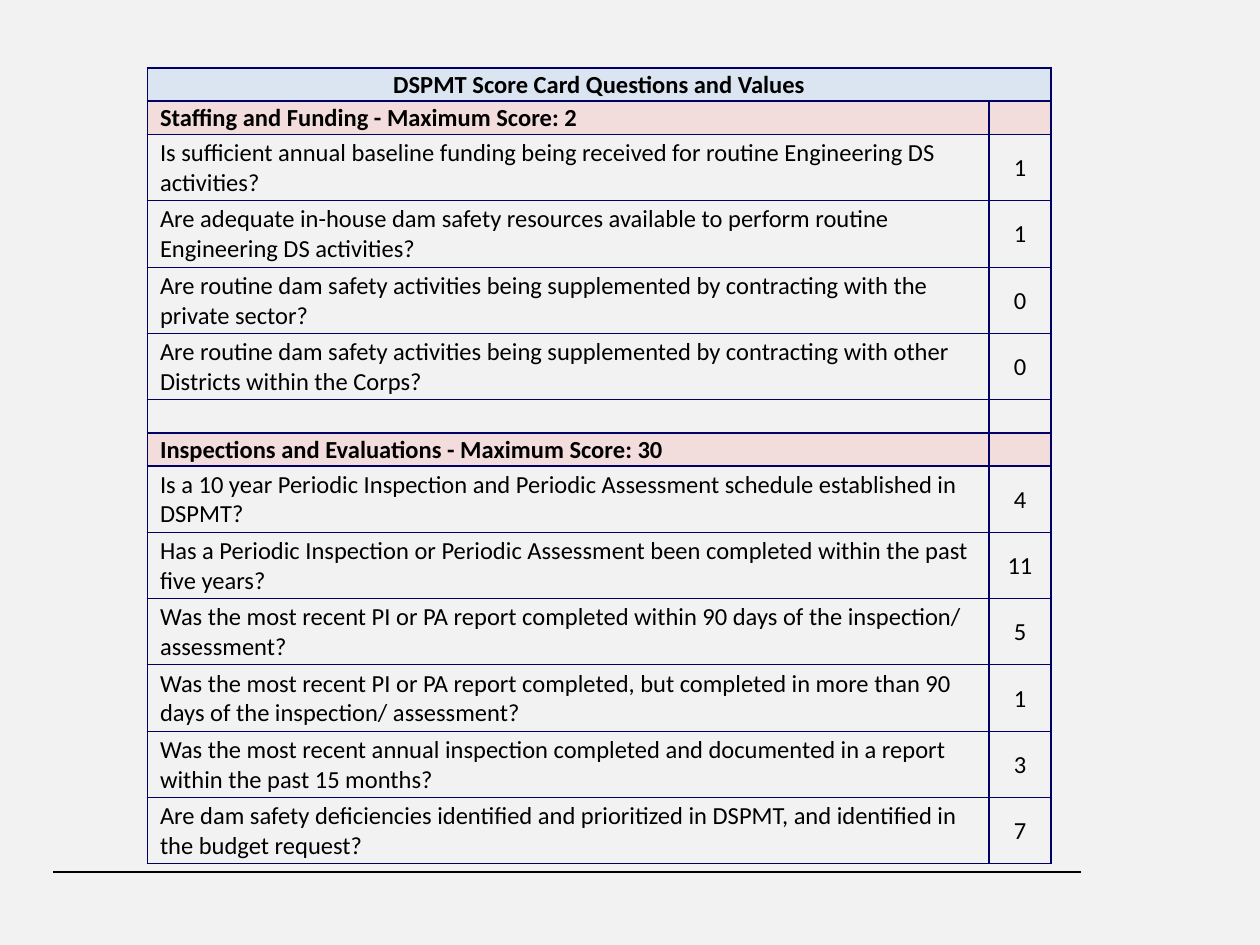
from lxml import etree
from pptx import Presentation
from pptx import util as u
from pptx.dml.color import RGBColor
from pptx.enum import shapes, text
from pptx.oxml.ns import qn

COLORS = {
    "background": "F2F2F2",
    "title": "DBE5F1",
    "section": "F2DDDC",
    "border": "000066",
    "ink": "000000",
}
THIN, THICK = 0.5, 1

# Each row: kind, text, value
ROWS = [
    ("title", "DSPMT Score Card Questions and Values", ""),
    ("section", "Staffing and Funding - Maximum Score: 2", ""),
    ("question", "Is sufficient annual baseline funding being received for routine Engineering DS activities?", "1"),
    ("question", "Are adequate in-house dam safety resources available to perform routine Engineering DS activities?", "1"),
    ("question", "Are routine dam safety activities being supplemented by contracting with the private sector?", "0"),
    ("question", "Are routine dam safety activities being supplemented by contracting with other Districts within the Corps?", "0"),
    ("gap", "", ""),
    ("section", "Inspections and Evaluations - Maximum Score: 30", ""),
    ("question", "Is a 10 year Periodic Inspection and Periodic Assessment schedule established in DSPMT?", "4"),
    ("question", "Has a Periodic Inspection or Periodic Assessment been completed within the past five years?", "11"),
    ("question", "Was the most recent PI or PA report completed within 90 days of the inspection/ assessment?", "5"),
    ("question", "Was the most recent PI or PA report completed, but completed in more than 90 days of the inspection/ assessment?", "1"),
    ("question", "Was the most recent annual inspection completed and documented in a report within the past 15 months?", "3"),
    ("question", "Are dam safety deficiencies identified and prioritized in DSPMT, and identified in the budget request?", "7"),
]


def set_borders(cell, top, bottom):
    properties = cell._tc.get_or_add_tcPr()
    widths = {"a:lnL": THICK, "a:lnR": THICK, "a:lnT": top, "a:lnB": bottom}
    for position, (tag, width) in enumerate(widths.items()):
        line = etree.Element(qn(tag), w=str(u.Pt(width)))
        fill = etree.SubElement(line, qn("a:solidFill"))
        etree.SubElement(fill, qn("a:srgbClr"), val=COLORS["border"])
        properties.insert(position, line)


def fill_cell(cell, content, kind, centred):
    cell.vertical_anchor = text.MSO_ANCHOR.MIDDLE
    cell.margin_left = u.Inches(0.01 if centred else 0.1)
    cell.margin_top = cell.margin_right = u.Inches(0.01)
    cell.margin_bottom = 0
    if kind in COLORS:
        cell.fill.solid()
        cell.fill.fore_color.rgb = RGBColor.from_string(COLORS[kind])
    else:
        cell.fill.background()
    paragraph = cell.text_frame.paragraphs[0]
    paragraph.alignment = text.PP_ALIGN.CENTER if centred else text.PP_ALIGN.LEFT
    paragraph.font.size = u.Pt(14)
    if not content:
        # Keeps an empty cell as low as its row
        etree.SubElement(paragraph._p, qn("a:endParaRPr"), sz="1400")
        return
    run = paragraph.add_run()
    run.text = content
    run.font.name = "Calibri"
    run.font.size = u.Pt(14)
    run.font.bold = kind in ("title", "section")
    run.font.color.rgb = RGBColor.from_string(COLORS["ink"])


presentation = Presentation()
presentation.slide_width = u.Inches(10)
presentation.slide_height = u.Inches(7.5)
slide = presentation.slides.add_slide(presentation.slide_layouts[6])
slide.background.fill.solid()
slide.background.fill.fore_color.rgb = RGBColor.from_string(COLORS["background"])

# Footer rule
rule = slide.shapes.add_connector(
    shapes.MSO_CONNECTOR.STRAIGHT,
    u.Inches(8.58), u.Inches(6.92), u.Inches(0.42), u.Inches(6.92))
rule.line.color.rgb = RGBColor.from_string(COLORS["ink"])
rule.line.width = u.Pt(0.75)
etree.SubElement(rule._element.spPr, qn("a:effectLst"))

# Score card: question rows are two text lines high, all others one
table_height = u.Inches(6.32)
line_counts = [2 if kind == "question" else 1 for kind, _, _ in ROWS]
line_height = table_height // sum(line_counts)
table = slide.shapes.add_table(
    len(ROWS), 2, u.Inches(1.17), u.Inches(0.54), u.Inches(7.17), table_height).table
table.first_row = False
table.horz_banding = False
table.columns[0].width = u.Inches(6.68)
table.columns[1].width = u.Inches(0.49)

for index, (kind, label, value) in enumerate(ROWS):
    table.rows[index].height = line_height * line_counts[index]
    previous = ROWS[index - 1][0] if index else ""
    following = ROWS[index + 1][0] if index + 1 < len(ROWS) else ""
    heading = kind in ("title", "section")
    top = THICK if heading or previous == "section" else THIN
    bottom = THICK if heading or following == "section" else THIN
    for column, content in enumerate((label, value)):
        cell = table.cell(index, column)
        fill_cell(cell, content, kind, column == 1 or kind == "title")
        set_borders(cell, top, bottom)

table.cell(0, 0).merge(table.cell(0, 1))

presentation.save("out.pptx")
